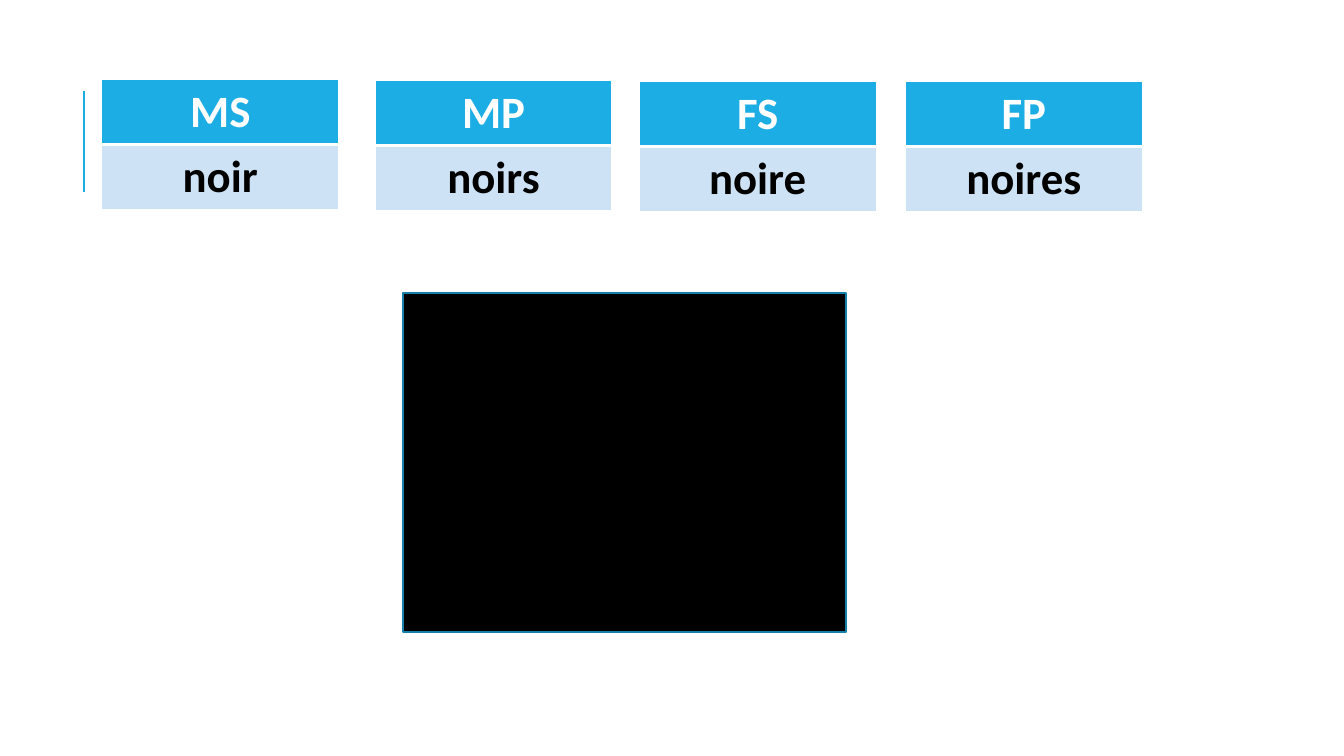
from dataclasses import dataclass

from lxml import etree
from pptx import Presentation
from pptx.dml.color import RGBColor
from pptx.enum.shapes import MSO_CONNECTOR, MSO_SHAPE
from pptx.enum.text import PP_ALIGN
from pptx.oxml.ns import qn
from pptx.util import Pt

PX = 9144
CENTER = PP_ALIGN.CENTER
RECTANGLE = MSO_SHAPE.RECTANGLE
STRAIGHT = MSO_CONNECTOR.STRAIGHT


@dataclass(frozen=True)
class Theme:
    font: str = "Calibri"
    word_size: int = 32
    accent: str = "1CADE4"
    outline: str = "1580A9"
    pale: str = "CDE3F5"
    white: str = "FFFFFF"
    black: str = "000000"


THEME = Theme()
FORMS = [
    ("MS", "noir", 101, 79),
    ("MP", "noirs", 372, 80),
    ("FS", "noire", 634, 81),
    ("FP", "noires", 898, 81),
]


def rgb(color):
    return RGBColor.from_string(color)


def emu(*lengths):
    return [length * PX for length in lengths]


def write(frame, text, *, size, color, bold=False, align=CENTER):
    para = frame.paragraphs[0]
    para.alignment = align
    span = para.add_run()
    span.text = text
    span.font.name = THEME.font
    span.font.size = Pt(size)
    span.font.bold = bold
    span.font.color.rgb = rgb(color)


def set_borders(cell, **widths):
    properties = cell._tc.get_or_add_tcPr()
    for index, side in enumerate("LRTB"):
        border = etree.Element(qn(f"a:ln{side}"), w=str(Pt(widths.get(side, 1))))
        fill = etree.SubElement(border, qn("a:solidFill"))
        etree.SubElement(fill, qn("a:srgbClr"), val=THEME.white)
        properties.insert(index, border)


def add_accent_line(page, box):
    left, top, width, height = box
    line = page.shapes.add_connector(
        STRAIGHT, *emu(left, top + height, left + width, top))
    line.line.color.rgb = rgb(THEME.accent)
    line.line.width = Pt(1.5)
    etree.SubElement(line._element.spPr, qn("a:effectLst"))


def add_color_swatch(page, box):
    swatch = page.shapes.add_shape(RECTANGLE, *emu(*box))
    swatch.shadow.inherit = False
    swatch.fill.solid()
    swatch.fill.fore_color.rgb = rgb(THEME.black)
    swatch.line.color.rgb = rgb(THEME.outline)
    swatch.line.width = Pt(1.25)


def add_form_table(page, box, label, word):
    table = page.shapes.add_table(2, 1, *emu(*box)).table
    rows = [
        (label, THEME.accent, THEME.white, 3),
        (word, THEME.pale, THEME.black, 1),
    ]
    for index, (text, fill, color, bottom) in enumerate(rows):
        cell = table.cell(index, 0)
        cell.fill.solid()
        cell.fill.fore_color.rgb = rgb(fill)
        set_borders(cell, T=rows[index - 1][3] if index else 1, B=bottom)
        write(cell.text_frame, text, size=THEME.word_size, color=color, bold=True)


def build_adjective_page(page):
    add_accent_line(page, (83, 90, 0, 100))
    add_color_swatch(page, (400, 291, 439, 336))
    for label, word, left, top in FORMS:
        add_form_table(page, (left, top, 235, 127), label, word)


def main():
    deck = Presentation()
    deck.slide_width, deck.slide_height = emu(1333, 750)
    build_adjective_page(deck.slides.add_slide(deck.slide_layouts[6]))
    deck.save("out.pptx")


if __name__ == "__main__":
    main()
